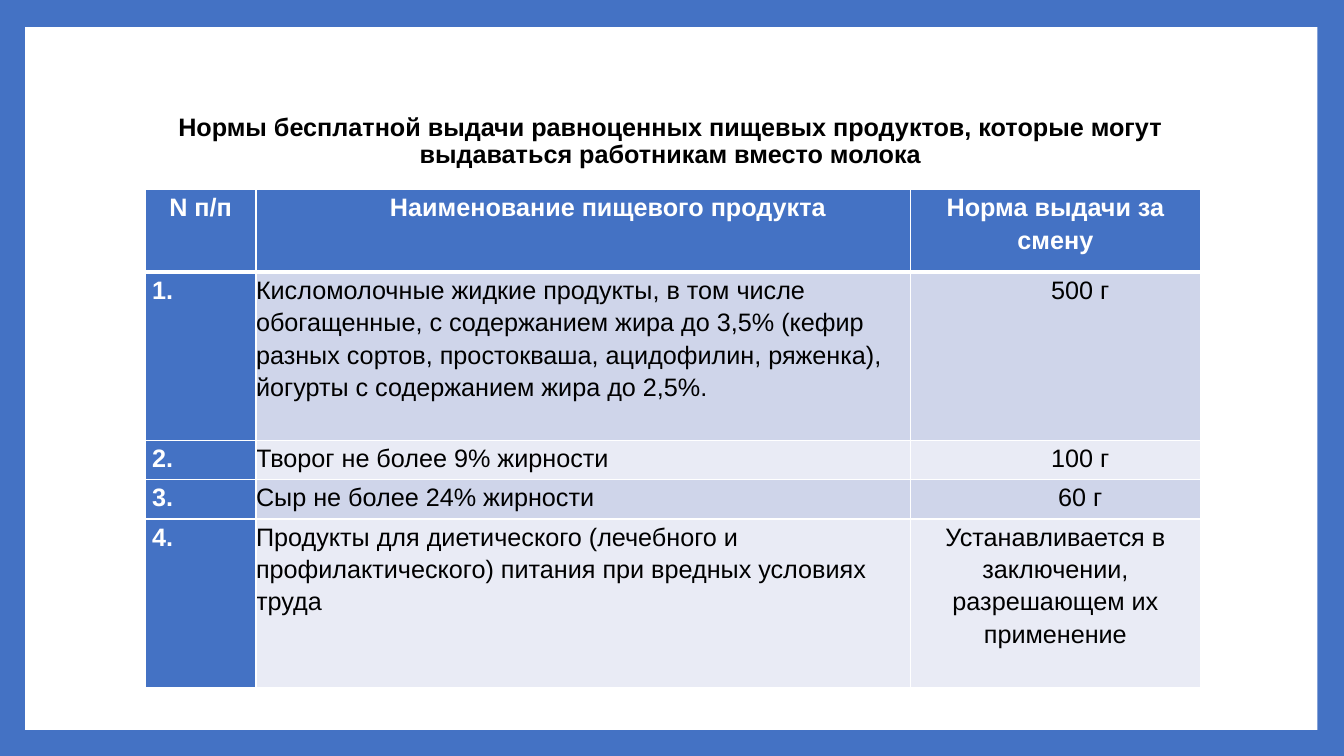
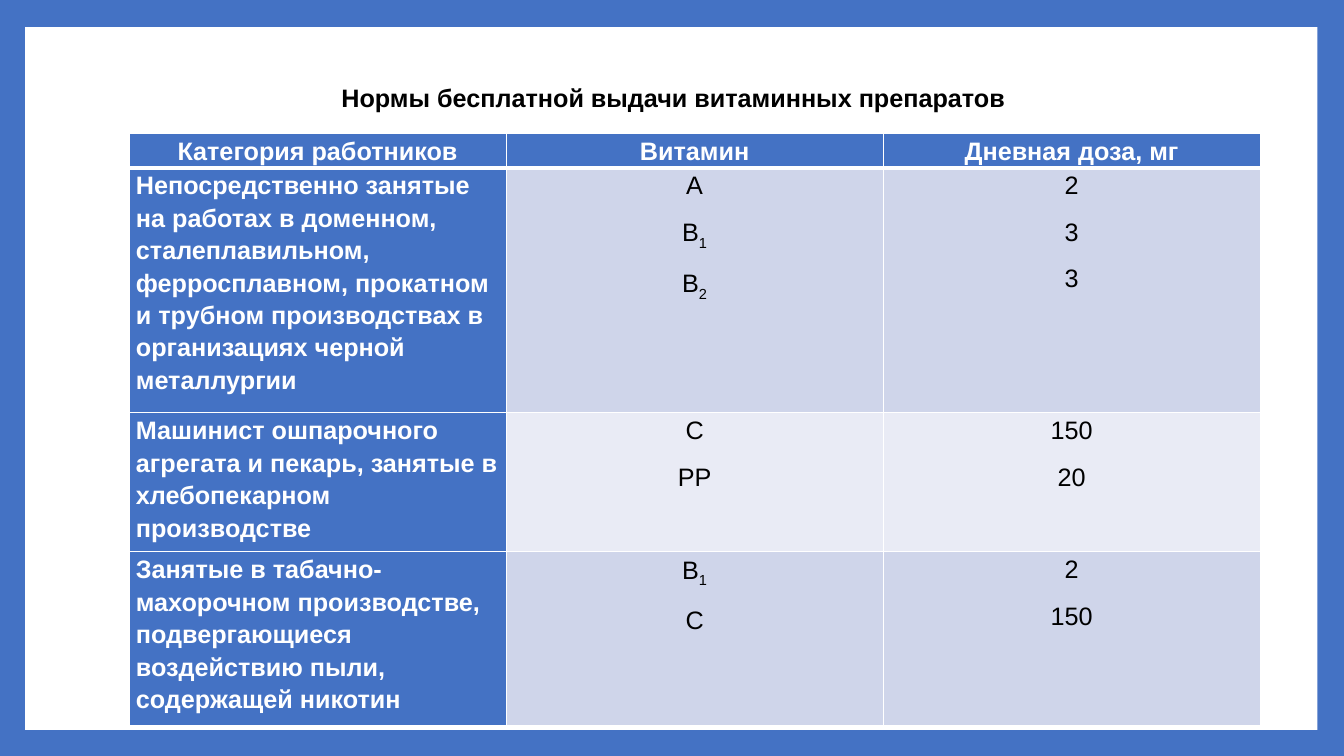
"""Build two slides with tables of free food and vitamin allowances for workers."""
from dataclasses import dataclass

from lxml.etree import SubElement
from pptx import Presentation
from pptx.dml.color import RGBColor
from pptx.enum.shapes import MSO_SHAPE
from pptx.enum.text import MSO_ANCHOR, PP_ALIGN
from pptx.oxml.ns import qn
from pptx.util import Pt


@dataclass(frozen=True)
class Theme:
    font: str = "Arial"
    size: int = 18
    blue: str = "4472C4"
    white: str = "FFFFFF"
    black: str = "000000"
    bands: tuple = ("CFD5EA", "E9EBF5")
    rule: int = 1
    header_rule: int = 3


theme = Theme()


def add_span(para, text, color, bold, subscript=False):
    span = para.add_run()
    span.text = text
    span.font.name = theme.font
    span.font.size = Pt(theme.size)
    span.font.bold = bold
    span.font.color.rgb = RGBColor.from_string(color)
    if subscript:
        span.font._element.set("baseline", "-25000")


def add_borders(cell, top, bottom):
    properties = cell._tc.get_or_add_tcPr()
    for side, width in (("L", theme.rule), ("R", theme.rule), ("T", top), ("B", bottom)):
        line = SubElement(properties, qn(f"a:ln{side}"), w=str(Pt(width)))
        fill = SubElement(line, qn("a:solidFill"))
        SubElement(fill, qn("a:srgbClr"), val=theme.white)


slides = [
    {
        "title": "Нормы бесплатной выдачи равноценных пищевых продуктов, "
                 "которые могут выдаваться работникам вместо молока",
        "title_at": (90, 48.2),
        "table_at": (103.7, 135.4),
        "widths": (79.2, 467.3, 207.4),
        "heights": (59, 120.2, 28.1, 28.1, 120.2),
        "side_inset": 0,
        "space_after": 0,
        "left_columns": (0, 1),
        "number_margin": 5,
        "indented": {(0, 1), (1, 2), (2, 2), (3, 2)},
        "rows": [
            ("N п/п", "Наименование пищевого продукта", "Норма выдачи за смену"),
            ("1.", "Кисломолочные жидкие продукты, в том числе обогащенные, с содержанием "
                   "жира до 3,5% (кефир разных сортов, простокваша, ацидофилин, ряженка), "
                   "йогурты с содержанием жира до 2,5%.", "500 г"),
            ("2.", "Творог не более 9% жирности", "100 г"),
            ("3.", "Сыр не более 24% жирности", "60 г"),
            ("4.", "Продукты для диетического (лечебного и профилактического) питания "
                   "при вредных условиях труда",
             "Устанавливается в заключении, разрешающем их применение"),
        ],
    },
    {
        "title": "Нормы бесплатной выдачи витаминных препаратов",
        "title_at": (92.2, 17.3),
        "table_at": (92.2, 95),
        "widths": (269.3,) * 3,
        "heights": (22.3, 175, 96.5, 115.9),
        "side_inset": 4.9,
        "space_after": 10,
        "left_columns": (0,),
        "number_margin": 0,
        "indented": set(),
        "rows": [
            ("Категория работников", "Витамин", "Дневная доза, мг"),
            ("Непосредственно занятые на работах в доменном, сталеплавильном, ферросплавном, "
             "прокатном и трубном производствах в организациях черной металлургии",
             "А\nВ_1\nВ_2", "2\n3\n3"),
            ("Машинист ошпарочного агрегата и пекарь, занятые в хлебопекарном производстве",
             "С\nРР", "150\n20"),
            ("Занятые в табачно-махорочном производстве, подвергающиеся воздействию пыли, "
             "содержащей никотин", "В_1\nС", "2\n150"),
        ],
    },
]

deck = Presentation()
deck.slide_width, deck.slide_height = Pt(960), Pt(540)
backdrop = deck.slide_master.background.fill
backdrop.solid()
backdrop.fore_color.rgb = RGBColor.from_string(theme.blue)

for content in slides:
    page = deck.slides.add_slide(deck.slide_layouts[6])

    panel = page.shapes.add_shape(MSO_SHAPE.RECTANGLE, Pt(18), Pt(19.4), Pt(923), Pt(502))
    panel.shadow.inherit = False
    panel.fill.solid()
    panel.fill.fore_color.rgb = RGBColor.from_string(theme.white)
    panel.line.fill.background()

    left, top = content["title_at"]
    title = page.shapes.add_textbox(Pt(left), Pt(top), Pt(777.6), Pt(106.6)).text_frame
    title.word_wrap = True
    title.vertical_anchor = MSO_ANCHOR.MIDDLE
    para = title.paragraphs[0]
    para.alignment = PP_ALIGN.CENTER
    para.line_spacing = 0.9
    add_span(para, content["title"], theme.black, True)

    rows, widths, heights = content["rows"], content["widths"], content["heights"]
    left, top = content["table_at"]
    table = page.shapes.add_table(len(rows), len(widths), Pt(left), Pt(top),
                                  Pt(sum(widths)), Pt(sum(heights))).table
    table.horz_banding = False
    table.first_col = True
    for column, width in zip(table.columns, widths):
        column.width = Pt(width)

    for row_index, texts in enumerate(rows):
        table.rows[row_index].height = Pt(heights[row_index])
        for column_index, text in enumerate(texts):
            cell = table.cell(row_index, column_index)
            heading = row_index == 0 or column_index == 0
            centred = row_index == 0 or column_index not in content["left_columns"]
            cell.margin_left = cell.margin_right = Pt(content["side_inset"])
            cell.margin_top = cell.margin_bottom = Pt(0)
            add_borders(cell, theme.header_rule if row_index == 1 else theme.rule,
                        theme.header_rule if row_index == 0 else theme.rule)
            cell.fill.solid()
            cell.fill.fore_color.rgb = RGBColor.from_string(
                theme.blue if heading else theme.bands[(row_index - 1) % 2])

            frame = cell.text_frame
            for line_index, line in enumerate(text.split("\n")):
                para = frame.add_paragraph() if line_index else frame.paragraphs[0]
                para.alignment = PP_ALIGN.CENTER if centred else PP_ALIGN.LEFT
                para.line_spacing = 1.15
                para.space_after = Pt(content["space_after"])
                if (row_index, column_index) in content["indented"]:
                    para._p.get_or_add_pPr().set("indent", str(Pt(35.4)))
                elif column_index == 0 and row_index:
                    para._p.get_or_add_pPr().set("marL", str(Pt(content["number_margin"])))
                for part_index, part in enumerate(line.split("_")):
                    add_span(para, part, theme.white if heading else theme.black,
                             heading, part_index > 0)

deck.save("out.pptx")
